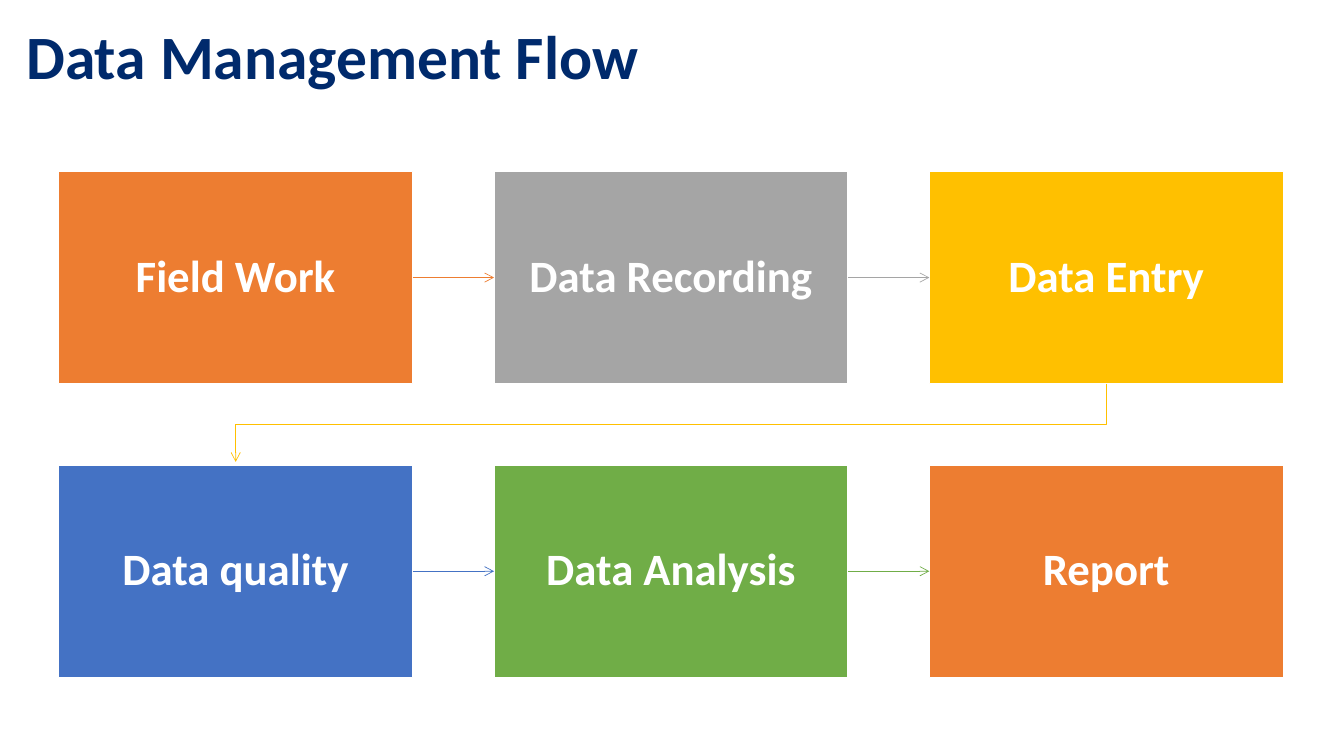
import pptx
from lxml import etree
from pptx.dml.color import RGBColor
from pptx.enum.shapes import MSO_CONNECTOR, MSO_SHAPE
from pptx.enum.text import MSO_ANCHOR, MSO_AUTO_SIZE, PP_ALIGN
from pptx.oxml.ns import qn
from pptx.util import Cm, Pt

NAVY = RGBColor(0x00, 0x2A, 0x6C)
WHITE = RGBColor(0xFF, 0xFF, 0xFF)
ORANGE = RGBColor(0xED, 0x7D, 0x31)
GRAY = RGBColor(0xA5, 0xA5, 0xA5)
GOLD = RGBColor(0xFF, 0xC0, 0x00)
BLUE = RGBColor(0x44, 0x72, 0xC4)
GREEN = RGBColor(0x70, 0xAD, 0x47)

STEPS = [
    ("Field Work", ORANGE),
    ("Data Recording", GRAY),
    ("Data Entry", GOLD),
    ("Data quality", BLUE),
    ("Data Analysis", GREEN),
    ("Report", ORANGE),
]
COLUMNS = 3
LEFT, TOP = Cm(1.48), Cm(4.32)
BOX_WIDTH, BOX_HEIGHT = Cm(8.92), Cm(5.35)
COLUMN_PITCH, ROW_PITCH = Cm(10.97), Cm(7.4)
ARROW_GAP = Cm(0.08)


class FlowSlide:
    """Holds the text style and the slide being filled."""

    def __init__(self, slide, font_name="Calibri"):
        self.slide = slide
        self.font_name = font_name

    def set_text(self, shape, text, size, color, alignment):
        """Put one bold, vertically centred line of text in a shape."""
        frame = shape.text_frame
        frame.text = text
        frame.word_wrap = True
        frame.auto_size = MSO_AUTO_SIZE.NONE
        frame.vertical_anchor = MSO_ANCHOR.MIDDLE
        paragraph = frame.paragraphs[0]
        paragraph.alignment = alignment
        paragraph.line_spacing = 0.9
        font = paragraph.runs[0].font
        font.name, font.size, font.bold = self.font_name, Pt(size), True
        font.color.rgb = color

    def title(self, text):
        title = self.slide.shapes.title
        title.left, title.top = Cm(0.41), Cm(0)
        title.width, title.height = Cm(33), Cm(3)
        self.set_text(title, text, 44, NAVY, PP_ALIGN.LEFT)

    def box(self, text, color, left, top):
        box = self.slide.shapes.add_shape(
            MSO_SHAPE.RECTANGLE, left, top, BOX_WIDTH, BOX_HEIGHT)
        box.shadow.inherit = False
        box.fill.solid()
        box.fill.fore_color.rgb = color
        box.line.color.rgb = WHITE
        box.line.width = Pt(1)
        frame = box.text_frame
        frame.margin_left = frame.margin_right = Cm(0.63)
        frame.margin_top = frame.margin_bottom = Cm(0.63)
        self.set_text(box, text, 32, WHITE, PP_ALIGN.CENTER)
        return box

    def style_arrow(self, arrow, color):
        arrow.line.color.rgb = color
        arrow.line.width = Pt(0.5)
        line = arrow.line._get_or_add_ln()
        etree.SubElement(line, qn("a:tailEnd"), type="arrow")

    def side_arrow(self, start, end, color):
        arrow = self.slide.shapes.add_connector(
            MSO_CONNECTOR.STRAIGHT, 0, 0, 0, 0)
        arrow.begin_connect(start, 3)
        arrow.end_connect(end, 1)
        self.style_arrow(arrow, color)
        etree.SubElement(arrow._element.spPr, qn("a:effectLst"))

    def row_arrow(self, start, end, color):
        """Lead from the bottom of one box to the top of a box in the next row."""
        start_x = start.left + start.width // 2
        end_x = end.left + end.width // 2
        bottom = start.top + start.height
        middle = (bottom + end.top) // 2
        builder = self.slide.shapes.build_freeform(start_x, bottom)
        builder.add_line_segments(
            [(start_x, middle), (end_x, middle), (end_x, end.top - ARROW_GAP)],
            close=False)
        arrow = builder.convert_to_shape()
        arrow.shadow.inherit = False
        arrow.fill.background()
        self.style_arrow(arrow, color)


def main():
    presentation = pptx.Presentation()
    presentation.slide_width, presentation.slide_height = Cm(33.87), Cm(19.05)
    slide = presentation.slides.add_slide(presentation.slide_layouts[5])
    flow = FlowSlide(slide)
    flow.title("Data Management Flow")

    boxes = []
    for index, (text, color) in enumerate(STEPS):
        row, column = divmod(index, COLUMNS)
        boxes.append(flow.box(text, color, LEFT + column * COLUMN_PITCH,
                              TOP + row * ROW_PITCH))

    for start, end, (_, color) in zip(boxes, boxes[1:], STEPS):
        connect = flow.side_arrow if start.top == end.top else flow.row_arrow
        connect(start, end, color)

    presentation.save("out.pptx")


if __name__ == "__main__":
    main()
